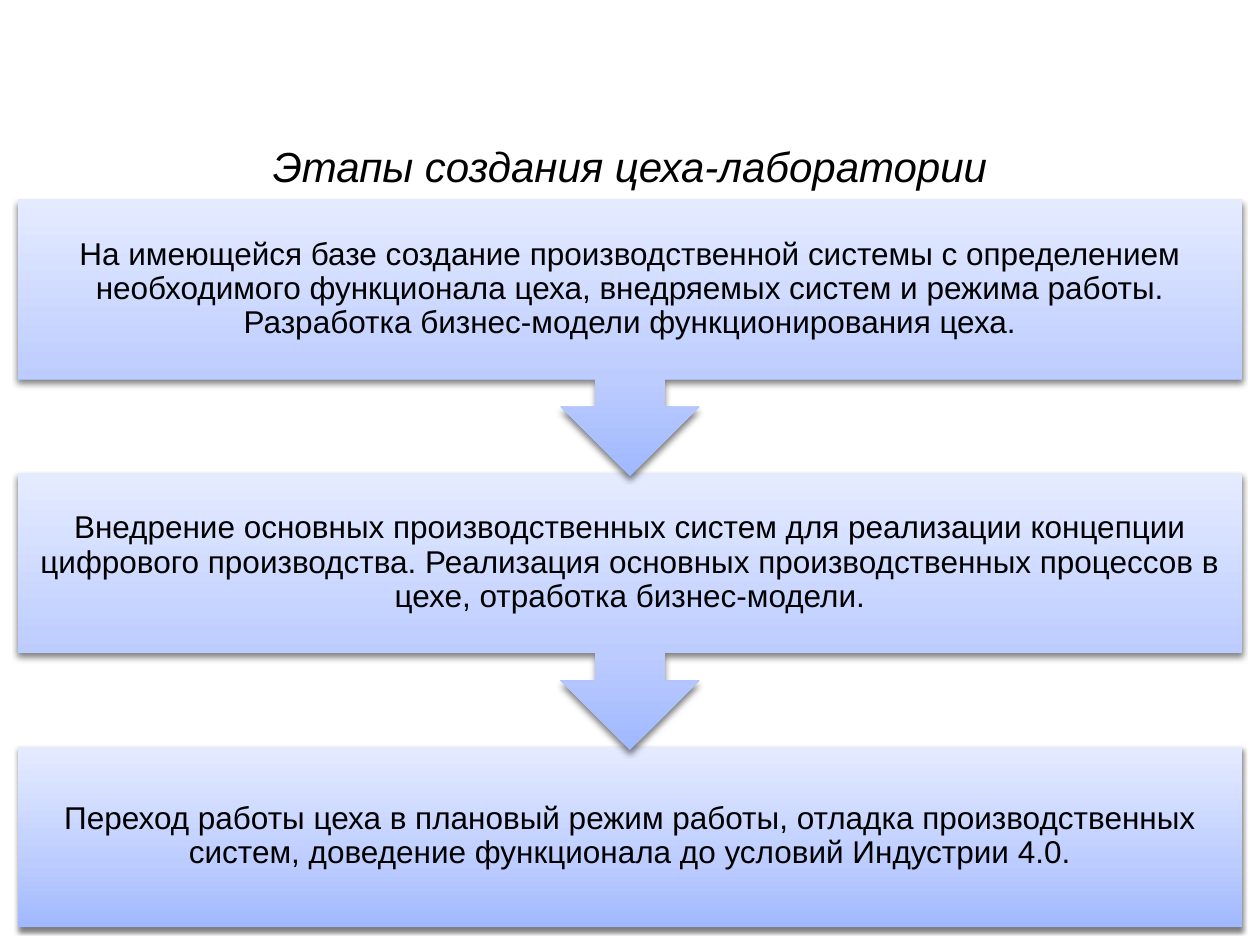
from lxml import etree
from pptx import Presentation
from pptx.dml.color import RGBColor
from pptx.enum import shapes, text
from pptx.oxml.ns import qn
from pptx.util import Cm, Pt

HEADING = "Этапы создания цеха-лаборатории"
STAGES = [
    "На имеющейся базе создание производственной системы с определением "
    "необходимого функционала цеха, внедряемых систем и режима работы. "
    "Разработка бизнес-модели функционирования цеха.",
    "Внедрение основных производственных систем для реализации концепции "
    "цифрового производства. Реализация основных производственных процессов "
    "в цехе, отработка бизнес-модели.",
    "Переход работы цеха в плановый режим работы, отладка производственных "
    "систем, доведение функционала до условий Индустрии 4.0.",
]

THEME = {
    "font": "Arial",
    "ink": RGBColor(0, 0, 0),
    "heading_size": Pt(24),
    "stage_size": Pt(18),
    "gradient": [(0, "A0B8FF"), (35, "BCCCFF"), (100, "E5EBFF")],
    "shadow": "000000",
}

SLIDE_W, SLIDE_H = Cm(25.4), Cm(19.05)
HEADING_TOP, HEADING_H = Cm(2.69), Cm(1.32)
STAGE_LEFT, STAGE_TOP = Cm(0.36), Cm(4.01)
STAGE_W = SLIDE_W - 2 * STAGE_LEFT
STAGE_PITCH = Cm(5.52)
BOX_H, CALLOUT_H = Cm(3.63), Cm(5.59)


def write(frame, words, size, margin, italic=False):
    frame.word_wrap = True
    frame.vertical_anchor = text.MSO_ANCHOR.MIDDLE
    frame.margin_left = frame.margin_right = margin
    frame.margin_top = frame.margin_bottom = margin
    frame.text = words
    paragraph = frame.paragraphs[0]
    paragraph.alignment = text.PP_ALIGN.CENTER
    font = paragraph.font
    font.name, font.size, font.italic = THEME["font"], size, italic
    font.color.rgb = THEME["ink"]
    return paragraph


def add_color(parent, color):
    return etree.SubElement(parent, qn("a:srgbClr"), val=color)


def paint(stage):
    """Give a stage its upward gradient, no outline and a soft shadow."""
    stage.fill.gradient()
    stage.fill.gradient_angle = 90
    stops = stage._element.spPr.find(".//" + qn("a:gsLst"))
    for stop in list(stops):
        stops.remove(stop)
    for percent, color in THEME["gradient"]:
        add_color(etree.SubElement(stops, qn("a:gs"), pos=str(percent * 1000)), color)
    stage.line.fill.background()

    stage.shadow.inherit = False
    effects = stage._element.spPr.find(qn("a:effectLst"))
    shadow = etree.SubElement(
        effects, qn("a:outerShdw"), blurRad=str(Pt(3)), dist=str(Pt(2)),
        dir="5400000", rotWithShape="0")
    etree.SubElement(add_color(shadow, THEME["shadow"]), qn("a:alpha"), val="50000")


def add_stage(slide, index, words):
    if index == len(STAGES) - 1:
        kind, height = shapes.MSO_SHAPE.RECTANGLE, BOX_H
    else:
        kind, height = shapes.MSO_SHAPE.DOWN_ARROW_CALLOUT, CALLOUT_H
    stage = slide.shapes.add_shape(
        kind, STAGE_LEFT, STAGE_TOP + index * STAGE_PITCH, STAGE_W, height)
    paint(stage)
    write(stage.text_frame, words, THEME["stage_size"], Cm(0.36)).line_spacing = 0.9


def main():
    deck = Presentation()
    deck.slide_width, deck.slide_height = SLIDE_W, SLIDE_H
    slide = deck.slides.add_slide(deck.slide_layouts[5])

    heading = slide.shapes.title
    heading.left, heading.top = 0, HEADING_TOP
    heading.width, heading.height = SLIDE_W, HEADING_H
    write(heading.text_frame, HEADING, THEME["heading_size"], Cm(0.15), italic=True)
    heading.text_frame.auto_size = text.MSO_AUTO_SIZE.SHAPE_TO_FIT_TEXT

    # The last stage goes in first, so each arrow tip lies over the next box.
    for index, words in reversed(list(enumerate(STAGES))):
        add_stage(slide, index, words)

    deck.save("out.pptx")


if __name__ == "__main__":
    main()
